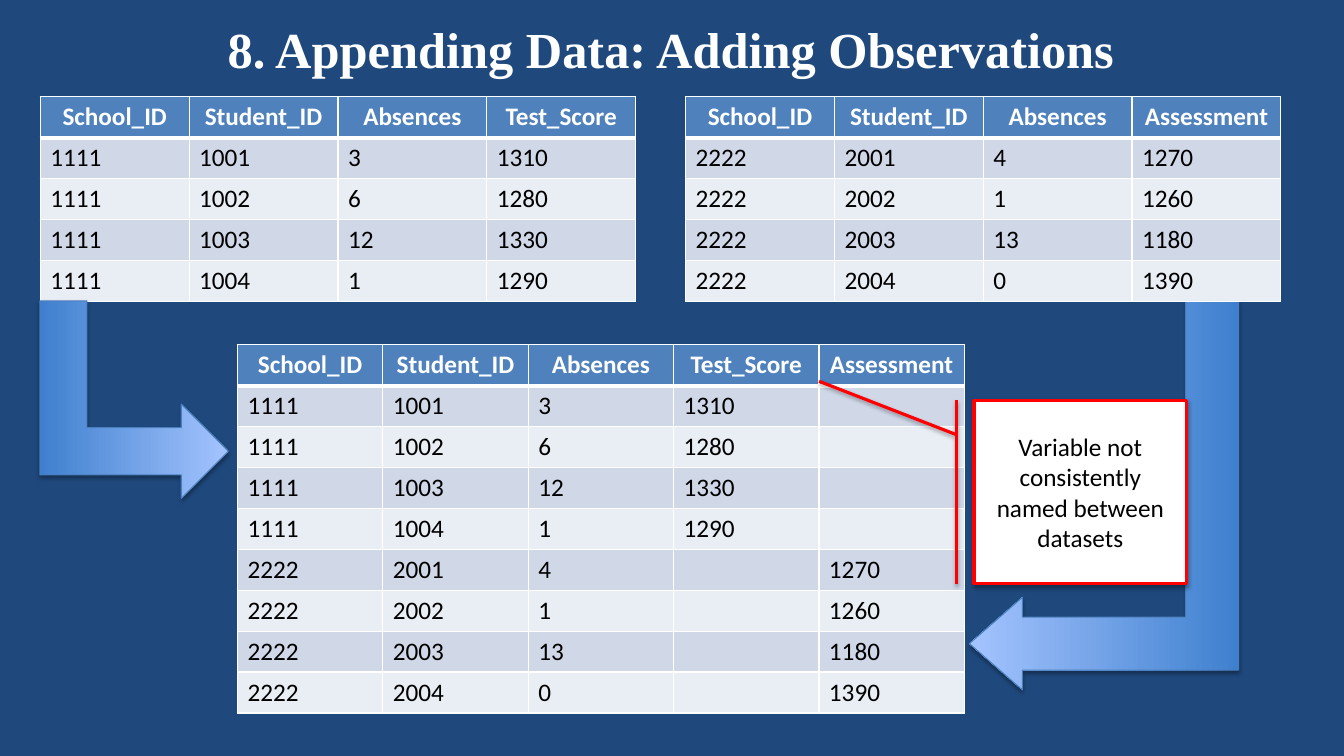
from dataclasses import dataclass

from lxml.etree import SubElement
from pptx import Presentation
from pptx.dml.color import RGBColor as RGB
from pptx.enum.shapes import MSO_SHAPE as Shape
from pptx.enum.text import MSO_ANCHOR as Anchor, PP_ALIGN as Align
from pptx.oxml import parse_xml
from pptx.oxml.ns import nsdecls, qn
from pptx.util import Inches, Pt

UNIT = 0.1  # inches per grid column and per grid row
TABLE_ROW = 4.06  # table row height in grid rows


@dataclass(frozen=True)
class Theme:
    background: str = "1F497D"
    white: str = "FFFFFF"
    black: str = "000000"
    header: str = "4F81BD"
    bands: tuple = ("D0D8E8", "E9EDF4")
    arrow: tuple = ("3F80CE", "A4C4FF")
    arrow_line: str = "4B7EBC"
    alert: str = "FF0000"
    title_font: str = "Times New Roman"
    body_font: str = "Calibri"
    title_size: int = 36
    body_size: int = 18


def grid(*lengths):
    return [Inches(length * UNIT) for length in lengths]


def apply(target, values):
    for name, value in values.items():
        setattr(target, name, value)


class SlideBuilder:
    def __init__(self, presentation, theme):
        self.theme = theme
        self.slide = presentation.slides.add_slide(presentation.slide_layouts[6])
        self.paint(self.slide.background, theme.background)

    def paint(self, target, color):
        target.fill.solid()
        target.fill.fore_color.rgb = RGB.from_string(color)

    def add_text(self, frame, text, color, bold=False, font=None, size=None, align=Align.CENTER):
        paragraph = frame.paragraphs[0]
        paragraph.alignment = align
        run = paragraph.add_run()
        run.text = text
        apply(run.font, {"name": font or self.theme.body_font,
                         "size": Pt(size or self.theme.body_size), "bold": bold})
        run.font.color.rgb = RGB.from_string(color)

    def title(self, text, box):
        frame = self.slide.shapes.add_textbox(*grid(*box)).text_frame
        apply(frame, {"word_wrap": True, "vertical_anchor": Anchor.MIDDLE})
        self.add_text(frame, text, self.theme.white, True, self.theme.title_font, self.theme.title_size)

    def shadow(self, shape):
        shape.shadow.inherit = False
        effects = shape._element.spPr.find(qn("a:effectLst"))
        effects.append(parse_xml(
            f'<a:outerShdw {nsdecls("a")} blurRad="40000" dist="23000" dir="5400000" rotWithShape="0">'
            f'<a:srgbClr val="{self.theme.black}"><a:alpha val="35000"/></a:srgbClr></a:outerShdw>'))

    def add_shape(self, kind, box, adjustments, line_color, line_width):
        shape = self.slide.shapes.add_shape(kind, *grid(*box))
        for index, value in enumerate(adjustments):
            shape.adjustments[index] = value
        shape.line.color.rgb = RGB.from_string(line_color)
        shape.line.width = Pt(line_width)
        return shape

    def bent_arrow(self, box, rotation, adjustments=(), flip=False):
        shape = self.add_shape(Shape.BENT_UP_ARROW, box, adjustments, self.theme.arrow_line, 0.75)
        shape.rotation = rotation
        if flip:
            shape._element.spPr.xfrm.set("flipH", "1")
        shape.fill.gradient()
        shape.fill.gradient_angle = 90
        for stop, color, position in zip(shape.fill.gradient_stops, self.theme.arrow, (0, 1)):
            stop.color.rgb = RGB.from_string(color)
            stop.position = position
        self.shadow(shape)

    def callout(self, text, box, adjustments):
        shape = self.add_shape(Shape.LINE_CALLOUT_1_BORDER_AND_ACCENT_BAR, box, adjustments,
                               self.theme.alert, 2.25)
        self.paint(shape, self.theme.white)
        self.shadow(shape)
        apply(shape.text_frame, {"word_wrap": True, "vertical_anchor": Anchor.MIDDLE})
        self.add_text(shape.text_frame, text, self.theme.black)

    def borders(self, cell, row):
        widths = {"L": 1, "R": 1, "T": 3 if row == 1 else 1, "B": 3 if row == 0 else 1}
        for side, width in widths.items():
            line = SubElement(cell._tc.get_or_add_tcPr(), qn(f"a:ln{side}"), w=str(Pt(width)))
            fill = SubElement(line, qn("a:solidFill"))
            SubElement(fill, qn("a:srgbClr"), val=self.theme.white)

    def table(self, records, left, top, column_width):
        rows, columns = len(records), len(records[0])
        box = grid(left, top, column_width * columns, TABLE_ROW * rows)
        table = self.slide.shapes.add_table(rows, columns, *box).table
        for row, record in enumerate(records):
            header = row == 0
            color = self.theme.header if header else self.theme.bands[(row - 1) % 2]
            for column, text in enumerate(record):
                cell = table.cell(row, column)
                cell.vertical_anchor = Anchor.MIDDLE if header else Anchor.BOTTOM
                self.borders(cell, row)
                self.paint(cell, color)
                if text:
                    self.add_text(cell.text_frame, text,
                                  self.theme.white if header else self.theme.black, header,
                                  align=Align.CENTER if header else Align.LEFT)


def main():
    presentation = Presentation()
    apply(presentation, {"slide_width": Inches(13.33), "slide_height": Inches(7.5)})
    builder = SlideBuilder(presentation, Theme())

    # Data: the appended table keeps both differently named score columns
    shared = ["School_ID", "Student_ID", "Absences"]
    first = [["1111", "1001", "3", "1310"], ["1111", "1002", "6", "1280"],
             ["1111", "1003", "12", "1330"], ["1111", "1004", "1", "1290"]]
    second = [["2222", "2001", "4", "1270"], ["2222", "2002", "1", "1260"],
              ["2222", "2003", "13", "1180"], ["2222", "2004", "0", "1390"]]
    appended = [record + [""] for record in first]
    appended += [record[:3] + ["", record[3]] for record in second]

    # Right arrow lies behind the tables
    builder.bent_arrow((90.2, 35.8, 38.6, 26.7), 270, (0.197, 0.172, 0.197), flip=True)

    # Title and tables
    builder.title("8. Appending Data: Adding Observations", (18.2, 0.2, 96.7, 9.1))
    builder.table([shared + ["Test_Score"]] + first, 4, 9.6, 14.76)
    builder.table([shared + ["Assessment"]] + second, 68, 9.6, 14.76)
    builder.table([shared + ["Test_Score", "Assessment"]] + appended, 23.55, 34.2, 14.42)

    # Callout and left arrow
    builder.callout("Variable not consistently named between datasets",
                    (96.6, 39.7, 21.1, 18.2), (0.188, -0.083, -0.103, -0.728))
    builder.bent_arrow((3.5, 30.3, 19.6, 18.7), 90)

    presentation.save("out.pptx")


if __name__ == "__main__":
    main()
